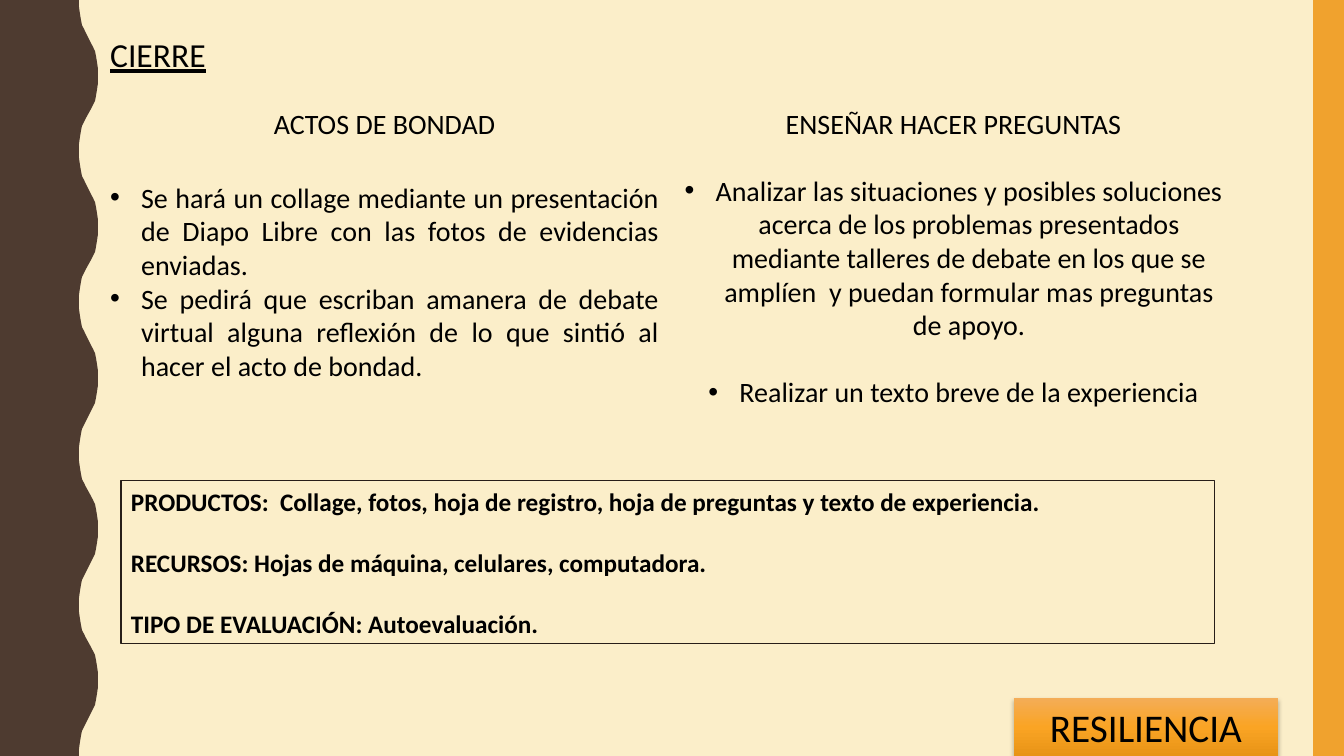
import copy

import pptx
import pptx.dml.color
import pptx.enum.shapes
import pptx.enum.text
import pptx.oxml
import pptx.oxml.ns
import pptx.util

RGB = pptx.dml.color.RGBColor
ALIGN = pptx.enum.text.PP_ALIGN
ANCHOR = pptx.enum.text.MSO_ANCHOR
RECT = pptx.enum.shapes.MSO_SHAPE.RECTANGLE

CREAM = RGB(0xFB, 0xEE, 0xC9)
BROWN = RGB(0x4E, 0x3B, 0x30)
AMBER = RGB(0xF0, 0xA2, 0x2E)
EDGE = RGB(0x27, 0x1E, 0x18)
BLACK = RGB(0, 0, 0)
BLEND = [(0, RGB(0xF4, 0xAD, 0x58)), (0.5, RGB(0xFA, 0xA4, 0x24)),
         (1, RGB(0xE8, 0x94, 0x16))]

TITLE = "CIERRE"
# Each column: heading, bullets, alignment, gap after heading, gap between bullets (pt)
COLUMNS = [
    ("ACTOS DE BONDAD",
     ["Se hará un collage mediante un presentación de Diapo Libre con las "
      "fotos de evidencias enviadas.",
      "Se pedirá que escriban amanera de debate virtual alguna reflexión de "
      "lo que sintió al hacer el acto de bondad."],
     ALIGN.JUSTIFY, 29, 0),
    ("ENSEÑAR HACER PREGUNTAS",
     ["Analizar las situaciones y posibles soluciones acerca de los problemas "
      "presentados mediante talleres de debate en los que se amplíen  y puedan "
      "formular mas preguntas de apoyo.",
      "Realizar un texto breve de la experiencia"],
     ALIGN.CENTER, 24, 24),
]
NOTES = [
    "PRODUCTOS:  Collage, fotos, hoja de registro, hoja de preguntas y texto de experiencia.",
    "RECURSOS: Hojas de máquina, celulares, computadora.",
    "TIPO DE EVALUACIÓN: Autoevaluación.",
]
TAG = "RESILIENCIA"

WIDE, HIGH = 1344, 756
PX = 12192000 / WIDE
LEFT, TOP, COL = 100, 101, 569
INDENT = 31
BASE, SWELL, WAVES = 79, 19, 5
RISE = [(0, 0), (0, 7), (1, 14), (2, 20), (3, 25), (5, 29), (7, 33)]


def px(n):
    return pptx.util.Emu(round(n * PX))


def place(shape, x, y, w, h):
    shape.left, shape.top, shape.width, shape.height = map(px, (x, y, w, h))


def setup(shape, anchor):
    frame = shape.text_frame
    frame.word_wrap = True
    frame.auto_size = pptx.enum.text.MSO_AUTO_SIZE.NONE
    frame.vertical_anchor = anchor
    return frame


def write(frame, rows):
    """Fill the frame from rows of (text, size, alignment, gap before)."""
    for i, (text, size, align, gap) in enumerate(rows):
        para = frame.add_paragraph() if i else frame.paragraphs[0]
        para.text = text
        para.alignment = align
        para.space_before = pptx.util.Pt(gap)
        para.font.size = pptx.util.Pt(size)
        para.font.name = "Calibri"
        para.font.color.rgb = BLACK
    return frame.paragraphs


def mark(para, dot):
    """Turn the bullet of a paragraph on or off, with its indent."""
    props = para._p.get_or_add_pPr()
    inset = px(INDENT) if dot else 0
    props.set("marL", str(inset))
    props.set("indent", str(-inset))
    kind = 'buChar char="•"' if dot else "buNone"
    props.append(pptx.oxml.parse_xml(f'<a:{kind} {pptx.oxml.ns.nsdecls("a")}/>'))


def block(slide, x, y, w, h):
    shape = slide.shapes.add_shape(RECT, px(x), px(y), px(w), px(h))
    shape.shadow.inherit = False
    shape.line.fill.background()
    return shape


def paint(shape, color):
    shape.fill.solid()
    shape.fill.fore_color.rgb = color


def draw_wave(slide):
    """Draw the side band; each wave mirrors its rise about crest and middle."""
    step = HIGH / WAVES
    half = RISE + [(SWELL - x, step / 2 - y) for x, y in reversed(RISE)]
    wave = half + [(x, step - y) for x, y in reversed(half[:-1])]
    edge = [(BASE + x, n * step + y) for n in range(WAVES) for x, y in wave]
    pen = slide.shapes.build_freeform(0, 0, scale=PX)
    pen.add_line_segments(edge + [(0, HIGH)], close=True)
    band = pen.convert_to_shape()
    band.shadow.inherit = False
    band.line.fill.background()
    paint(band, BROWN)


def draw_tag(slide):
    tag = block(slide, 1014, 698, 264, 58)
    tag.fill.gradient()
    tag.fill.gradient_angle = 270
    stops = tag.element.xpath(".//a:gsLst")[0]
    stops.insert(1, copy.deepcopy(stops[0]))
    for stop, (spot, color) in zip(tag.fill.gradient_stops, BLEND):
        stop.position = spot
        stop.color.rgb = color
    tag.element.xpath(".//a:effectLst")[0].append(pptx.oxml.parse_xml(
        f'<a:outerShdw {pptx.oxml.ns.nsdecls("a")} blurRad="38100" dist="25400" '
        'dir="5400000" rotWithShape="0"><a:srgbClr val="000000">'
        '<a:alpha val="25000"/></a:srgbClr></a:outerShdw>'))
    write(setup(tag, ANCHOR.MIDDLE), [(TAG, 28, ALIGN.CENTER, 0)])


def main():
    deck = pptx.Presentation()
    deck.slide_width, deck.slide_height = px(WIDE), px(HIGH)
    slide = deck.slides.add_slide(deck.slide_layouts.get_by_name("Two Content"))
    paint(slide.background, CREAM)

    draw_wave(slide)
    paint(block(slide, 1313, 0, WIDE - 1313, HIGH), AMBER)

    title, *bodies = list(slide.placeholders)[:3]
    place(title, LEFT, 29, COL, 51)
    head = write(setup(title, ANCHOR.TOP), [(TITLE, 24, ALIGN.LEFT, 0)])[0]
    head.font.underline = True

    for i, (body, column) in enumerate(zip(bodies, COLUMNS)):
        name, items, align, first, gap = column
        place(body, LEFT + i * COL, TOP, COL, 360)
        rows = [(name, 20, ALIGN.CENTER, 0)]
        rows += [(item, 20, align, gap if n else first)
                 for n, item in enumerate(items)]
        for n, para in enumerate(write(setup(body, ANCHOR.TOP), rows)):
            mark(para, n > 0)

    notes = block(slide, 121, 481, 1094, 163)
    notes.fill.background()
    notes.line.color.rgb = EDGE
    notes.line.width = pptx.util.Pt(0.75)
    rows = [(note, 18, ALIGN.JUSTIFY, 22 if n else 0)
            for n, note in enumerate(NOTES)]
    for para in write(setup(notes, ANCHOR.MIDDLE), rows):
        para.font.bold = True

    draw_tag(slide)
    deck.save("out.pptx")


if __name__ == "__main__":
    main()
